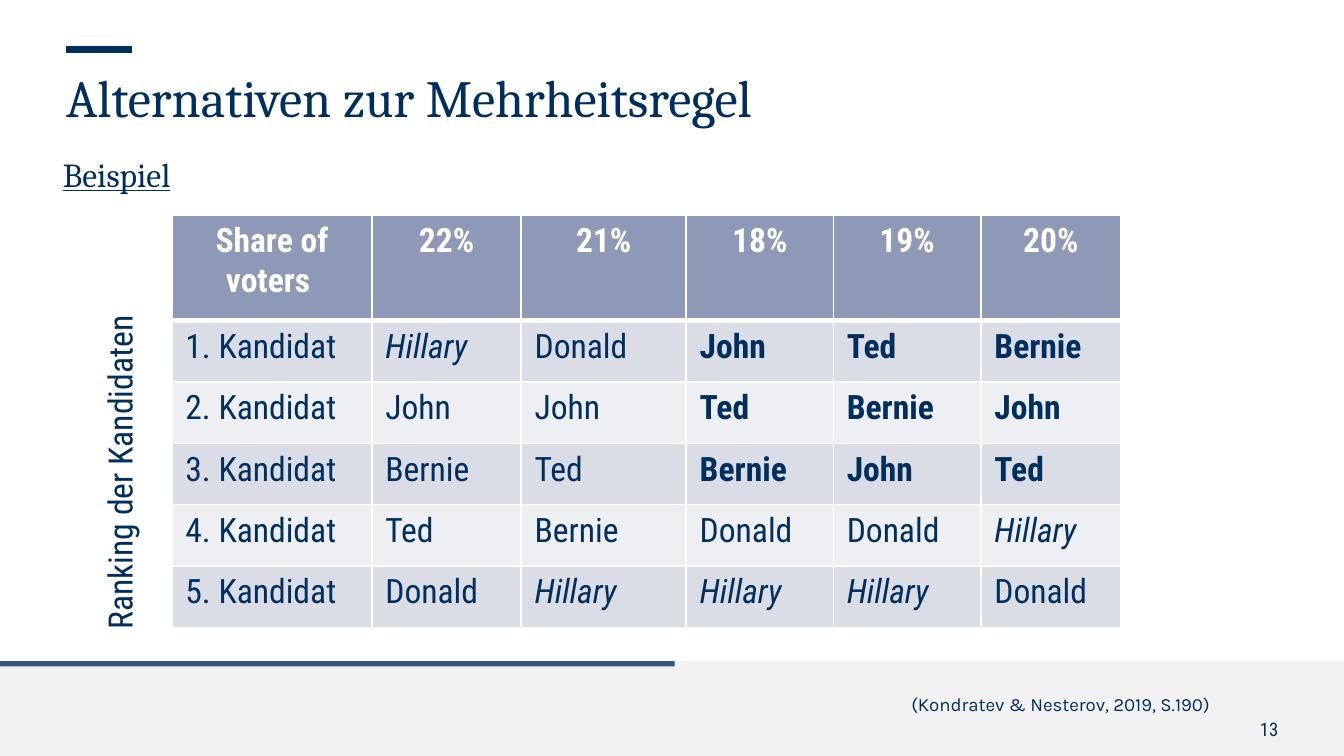
from dataclasses import dataclass

from lxml.etree import SubElement
from pptx import Presentation
from pptx.dml.color import RGBColor
from pptx.enum.shapes import MSO_CONNECTOR, MSO_SHAPE
from pptx.enum.text import MSO_ANCHOR, MSO_AUTO_SIZE, PP_ALIGN
from pptx.oxml.ns import qn
from pptx.util import Cm, Pt


@dataclass(frozen=True)
class Theme:
    ink: str = "002F5D"
    white: str = "FFFFFF"
    footer: str = "F2F2F2"
    header: str = "8E98B7"
    bands: tuple = ("DBDDE6", "EEEFF3")
    serif: str = "Cambria"
    condensed: str = "Roboto Condensed"
    citation: str = "Karla"
    title_size: int = 28
    text_size: int = 18
    small_size: int = 10


class SlideBuilder:
    """Draws styled elements on the current slide."""

    def __init__(self, page, theme):
        self.page = page
        self.theme = theme

    def add_span(self, para, text, name, size, color=None, align=PP_ALIGN.LEFT, **formats):
        para.alignment = align
        para.space_before = Pt(0)
        span = para.add_run()
        span.text = text
        for key, value in {"name": name, "size": Pt(size), **formats}.items():
            setattr(span.font, key, value)
        span.font.color.rgb = RGBColor.from_string(color or self.theme.ink)

    def place(self, box, area):
        for key, value in zip(("left", "top", "width", "height"), area):
            setattr(box, key, Cm(value))

    def frame(self, box, anchor=MSO_ANCHOR.TOP, margin=0):
        formats = {"word_wrap": True, "auto_size": MSO_AUTO_SIZE.NONE, "vertical_anchor": anchor}
        for side in ("left", "top", "right", "bottom"):
            formats[f"margin_{side}"] = Cm(margin)
        for key, value in formats.items():
            setattr(box.text_frame, key, value)
        return box.text_frame.paragraphs[0]

    def placeholder(self, index, area, text, size, **formats):
        box = self.page.placeholders[index]
        self.place(box, area)
        para = self.frame(box)
        properties = para._p.get_or_add_pPr()
        properties.set("marL", "0")
        properties.set("indent", "0")
        SubElement(properties, qn("a:buNone"))
        self.add_span(para, text, self.theme.serif, size, **formats)

    def text(self, area, text, name, size, align=PP_ALIGN.LEFT, rotation=0, margin=0):
        box = self.page.shapes.add_textbox(*map(Cm, area))
        box.rotation = rotation
        para = self.frame(box, MSO_ANCHOR.MIDDLE, margin)
        self.add_span(para, text, name, size, align=align)

    def bar(self, area, color, alpha=100):
        box = self.page.shapes.add_shape(MSO_SHAPE.RECTANGLE, *map(Cm, area))
        box.shadow.inherit = False
        box.fill.solid()
        box.fill.fore_color.rgb = RGBColor.from_string(color)
        box.line.fill.background()
        if alpha < 100:
            shade = box._element.spPr.find(qn("a:solidFill"))[0]
            SubElement(shade, qn("a:alpha"), val=str(alpha * 1000))

    def rule(self, left, right, top, width):
        line = self.page.shapes.add_connector(
            MSO_CONNECTOR.STRAIGHT, Cm(left), Cm(top), Cm(right), Cm(top))
        line.line.color.rgb = RGBColor.from_string(self.theme.ink)
        line.line.width = Pt(width)
        SubElement(line._element.spPr, qn("a:effectLst"))

    def borders(self, cell, widths):
        properties = cell._tc.get_or_add_tcPr()
        for side, width in widths.items():
            line = SubElement(properties, qn(f"a:{side}"), w=str(int(Pt(width))))
            fill = SubElement(line, qn("a:solidFill"))
            SubElement(fill, qn("a:srgbClr"), val=self.theme.white)

    def cell(self, cell, text, fill, widths, **formats):
        self.borders(cell, widths)
        cell.fill.solid()
        cell.fill.fore_color.rgb = RGBColor.from_string(fill)
        para = cell.text_frame.paragraphs[0]
        self.add_span(para, text, self.theme.condensed, self.theme.text_size, **formats)

    def ranking_table(self, left, top, widths, heights, header, rankings):
        theme = self.theme
        area = map(Cm, (left, top, sum(widths), sum(heights)))
        table = self.page.shapes.add_table(len(heights), len(widths), *area).table
        table.horz_banding = False
        for column, width in zip(table.columns, widths):
            column.width = Cm(width)
        for row, height in zip(table.rows, heights):
            row.height = Cm(height)
        edges = {"lnL": 1, "lnR": 1, "lnT": 1, "lnB": 1}
        for column, text in enumerate(header):
            self.cell(table.cell(0, column), text, theme.header, {**edges, "lnB": 3},
                      color=theme.white, align=PP_ALIGN.CENTER, bold=True)
        for rank, names in enumerate(rankings, start=1):
            top_edge = 3 if rank == 1 else 1
            for column, text in enumerate((f"{rank}. Kandidat", *names)):
                self.cell(table.cell(rank, column), text, theme.bands[(rank - 1) % 2],
                          {**edges, "lnT": top_edge},
                          bold=rank <= 3 and column >= 3, italic=text == "Hillary")


def main():
    deck = Presentation()
    deck.slide_width, deck.slide_height = Cm(25.4), Cm(14.29)
    theme = Theme()
    builder = SlideBuilder(deck.slides.add_slide(deck.slide_layouts[1]), theme)

    builder.bar((0, 12.5, 25.4, 1.79), theme.footer)
    builder.bar((0, 12.5, 12.75, 0.1), theme.ink, alpha=80)
    builder.rule(1.25, 2.49, 0.94, 3.5)
    builder.placeholder(0, (1.25, 1.24, 23.37, 1.6),
                        "Alternativen zur Mehrheitsregel", theme.title_size)
    builder.placeholder(1, (1.19, 2.9, 22.78, 7.8), "Beispiel", theme.text_size, underline=True)

    builder.ranking_table(
        3.25, 4.06,
        widths=(3.78, 2.82, 3.12, 2.78, 2.79, 2.64),
        heights=(2, *[1.16] * 5),
        header=("Share of voters ", "22%", "21%", "18%", "19%", "20%"),
        rankings=(
            ("Hillary", "Donald", "John", "Ted", "Bernie"),
            ("John", "John", "Ted", "Bernie", "John"),
            ("Bernie", "Ted", "Bernie", "John", "Ted"),
            ("Ted", "Bernie", "Donald", "Donald", "Hillary"),
            ("Donald", "Hillary", "Hillary", "Hillary", "Donald"),
        ))
    builder.text((-1.07, 8.31, 6.65, 1.02), "Ranking der Kandidaten",
                 theme.condensed, theme.text_size, rotation=270, margin=0.25)
    builder.text((8.33, 13.08, 14.53, 0.46), "(Kondratev & Nesterov, 2019, S.190)",
                 theme.citation, theme.small_size, align=PP_ALIGN.RIGHT)
    builder.text((22.89, 13.56, 1.27, 0.43), "13",
                 theme.condensed, theme.small_size, align=PP_ALIGN.RIGHT)
    deck.save("out.pptx")


if __name__ == "__main__":
    main()
